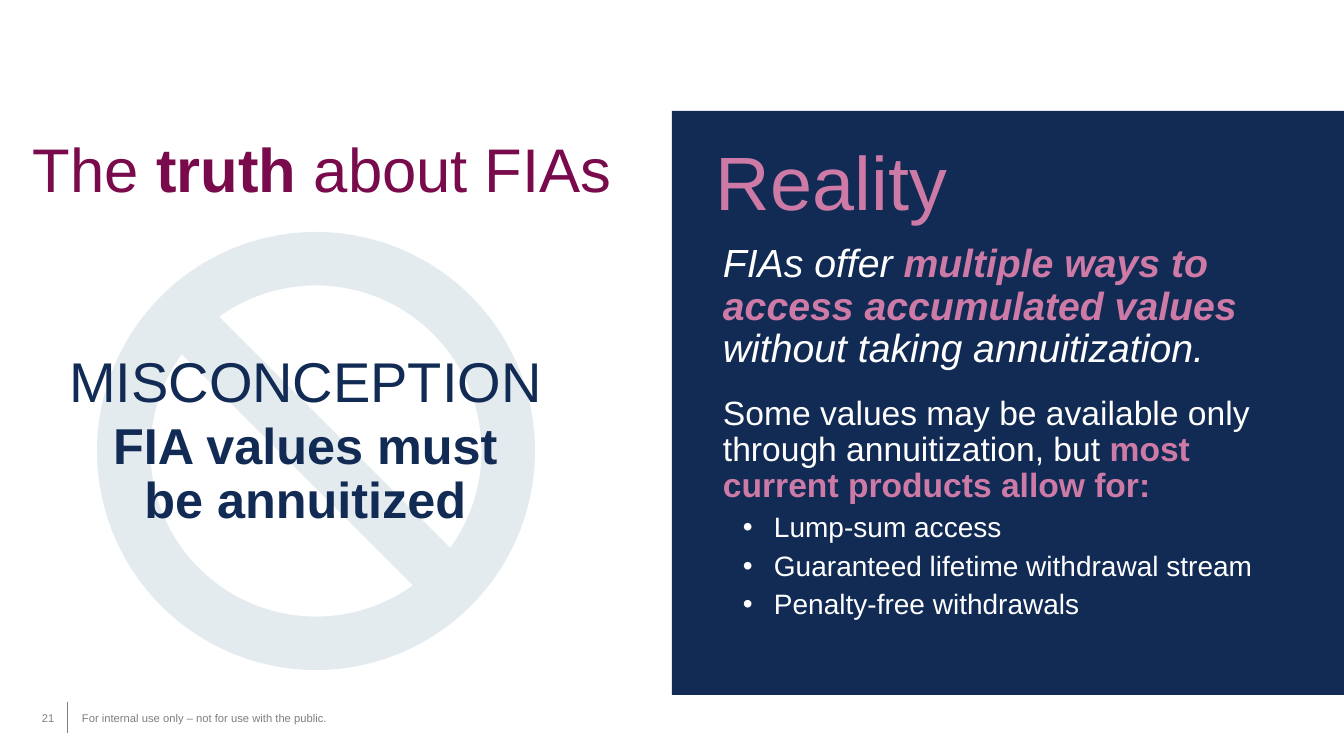
"""Builds the slide that sets an annuitization misconception against reality."""
from dataclasses import dataclass

from lxml import etree
from pptx import Presentation
from pptx import util as u
from pptx.dml.color import RGBColor
from pptx.enum import shapes, text
from pptx.oxml import ns


@dataclass(frozen=True)
class Theme:
    font: str = "Arial"
    plum: str = "790B4D"
    navy: str = "122B54"
    pink: str = "CD7BA6"
    white: str = "FFFFFF"
    mist: str = "CBD9E0"
    grey: str = "7F7F7F"
    heading: int = 44
    reality: int = 54
    label: int = 40
    claim: int = 36
    lead: int = 28
    detail: int = 24
    bullet: int = 20
    small: int = 8


THEME = Theme()
PX = 914400 / 100.8
SLIDE = (1344, 756)

HEADING = [dict(runs=["The ", ("truth", THEME.plum), " about FIAs"],
                size=THEME.heading, color=THEME.plum, center=True, spacing=0.9)]
MISCONCEPTION = [
    dict(runs=["MISCONCEPTION"], size=THEME.label, color=THEME.navy,
         center=True, spacing=0.9),
    dict(runs=["FIA values must\nbe annuitized"], size=THEME.claim, color=THEME.navy,
         bold=True, center=True, spacing=0.9, before=4.4),
]
REALITY = [dict(runs=["Reality"], size=THEME.reality, color=THEME.pink)]
ANSWER = [
    dict(runs=["FIAs offer ", ("multiple ways to access accumulated values ", THEME.pink),
               "without taking annuitization."],
         size=THEME.lead, color=THEME.white, italic=True, spacing=0.9),
    dict(runs=["Some values may be available only through annuitization, but ",
               ("most\ncurrent products allow for:", THEME.pink)],
         size=THEME.detail, color=THEME.white, spacing=0.9, before=18),
] + [
    dict(runs=[option], size=THEME.bullet, color=THEME.white, spacing=0.9, before=6,
         bullet=True)
    for option in ("Lump-sum access", "Guaranteed lifetime withdrawal stream",
                   "Penalty-free withdrawals")
]
NUMBER = [dict(runs=["21"], size=THEME.small, color=THEME.grey)]
NOTICE = [dict(runs=["For internal use only – not for use with the public."],
               size=THEME.small, color=THEME.grey)]

HEADING_BOX = (30, 111, 585, 95)
MISCONCEPTION_BOX = (43, 334, 515, 243)
PANEL_BOX = (672, 111, 672, 584)
SIGN_BOX = (97, 232, 438, 438)
REALITY_BOX = (706, 130, 254, 102)
ANSWER_BOX = (723, 244, 585, 414)
NUMBER_BOX = (42, 698, 40, 40)
NOTICE_BOX = (82, 705, 1200, 26)
DIVIDER = (68, 702, 68, 733)


def px(*lengths):
    return [u.Emu(round(length * PX)) for length in lengths]


def set_bullet(paragraph, shown):
    props = paragraph._p.get_or_add_pPr()
    indent, hang = px(51, -31) if shown else px(0, 0)
    props.set("marL", str(indent))
    props.set("indent", str(hang))
    if shown:
        etree.SubElement(props, ns.qn("a:buFont"), typeface=THEME.font)
        etree.SubElement(props, ns.qn("a:buChar"), char="•")
    else:
        etree.SubElement(props, ns.qn("a:buNone"))


def write_paragraph(paragraph, content):
    set_bullet(paragraph, content.get("bullet", False))
    paragraph.alignment = (text.PP_ALIGN.CENTER if content.get("center")
                           else text.PP_ALIGN.LEFT)
    paragraph.line_spacing = content.get("spacing", 1.0)
    paragraph.space_before = u.Pt(content.get("before", 0))
    font = paragraph.font
    font.name, font.size = THEME.font, u.Pt(content["size"])
    font.bold = content.get("bold", False)
    font.italic = content.get("italic", False)
    font.color.rgb = RGBColor.from_string(content["color"])
    for part in content["runs"]:
        wording, accent = (part, None) if isinstance(part, str) else part
        for index, line in enumerate(wording.split("\n")):
            if index:
                paragraph.add_line_break()
            run = paragraph.add_run()
            run.text = line
            if accent:
                run.font.bold = True
                run.font.color.rgb = RGBColor.from_string(accent)


def fill_text(holder, box, paragraphs, insets=(0, 0, 0, 0), anchor=text.MSO_ANCHOR.TOP):
    holder.left, holder.top, holder.width, holder.height = px(*box)
    frame = holder.text_frame
    frame.word_wrap = True
    frame.auto_size = text.MSO_AUTO_SIZE.NONE
    frame.vertical_anchor = anchor
    (frame.margin_left, frame.margin_top,
     frame.margin_right, frame.margin_bottom) = px(*insets)
    for index, content in enumerate(paragraphs):
        write_paragraph(frame.add_paragraph() if index else frame.paragraphs[0], content)


def add_backdrop(slide, kind, box, color):
    backdrop = slide.shapes.add_shape(kind, *px(*box))
    backdrop.shadow.inherit = False
    backdrop.fill.solid()
    backdrop.fill.fore_color.rgb = RGBColor.from_string(color)
    backdrop.line.fill.background()
    slide.shapes._spTree.insert(2, backdrop._element)
    return backdrop


def add_divider(slide):
    divider = slide.shapes.add_connector(shapes.MSO_CONNECTOR.STRAIGHT, *px(*DIVIDER))
    divider.line.color.rgb = RGBColor.from_string(THEME.grey)
    divider.line.width = u.Pt(0.75)
    etree.SubElement(divider._element.spPr, ns.qn("a:effectLst"))


def main():
    deck = Presentation()
    deck.slide_width, deck.slide_height = px(*SLIDE)
    slide = deck.slides.add_slide(deck.slide_layouts.get_by_name("Two Content"))
    heading, misconception, answer = slide.placeholders

    add_backdrop(slide, shapes.MSO_SHAPE.RECTANGLE, PANEL_BOX, THEME.navy)
    sign = add_backdrop(slide, shapes.MSO_SHAPE.NO_SYMBOL, SIGN_BOX, THEME.mist)
    sign.adjustments[0] = 0.122
    tint = sign._element.spPr.find(".//" + ns.qn("a:srgbClr"))
    etree.SubElement(tint, ns.qn("a:alpha"), val="50000")

    fill_text(heading, HEADING_BOX, HEADING, anchor=text.MSO_ANCHOR.BOTTOM)
    fill_text(misconception, MISCONCEPTION_BOX, MISCONCEPTION, (20, 20, 10, 10))
    fill_text(answer, ANSWER_BOX, ANSWER)

    middle, top = text.MSO_ANCHOR.MIDDLE, text.MSO_ANCHOR.TOP
    for box, content, insets, anchor in (
            (REALITY_BOX, REALITY, (10, 5, 10, 5), top),
            (NUMBER_BOX, NUMBER, (0, 6, 0, 6), middle),
            (NOTICE_BOX, NOTICE, (0, 6, 12, 6), top)):
        fill_text(slide.shapes.add_textbox(*px(*box)), box, content, insets, anchor)
    add_divider(slide)
    deck.save("out.pptx")


if __name__ == "__main__":
    main()
